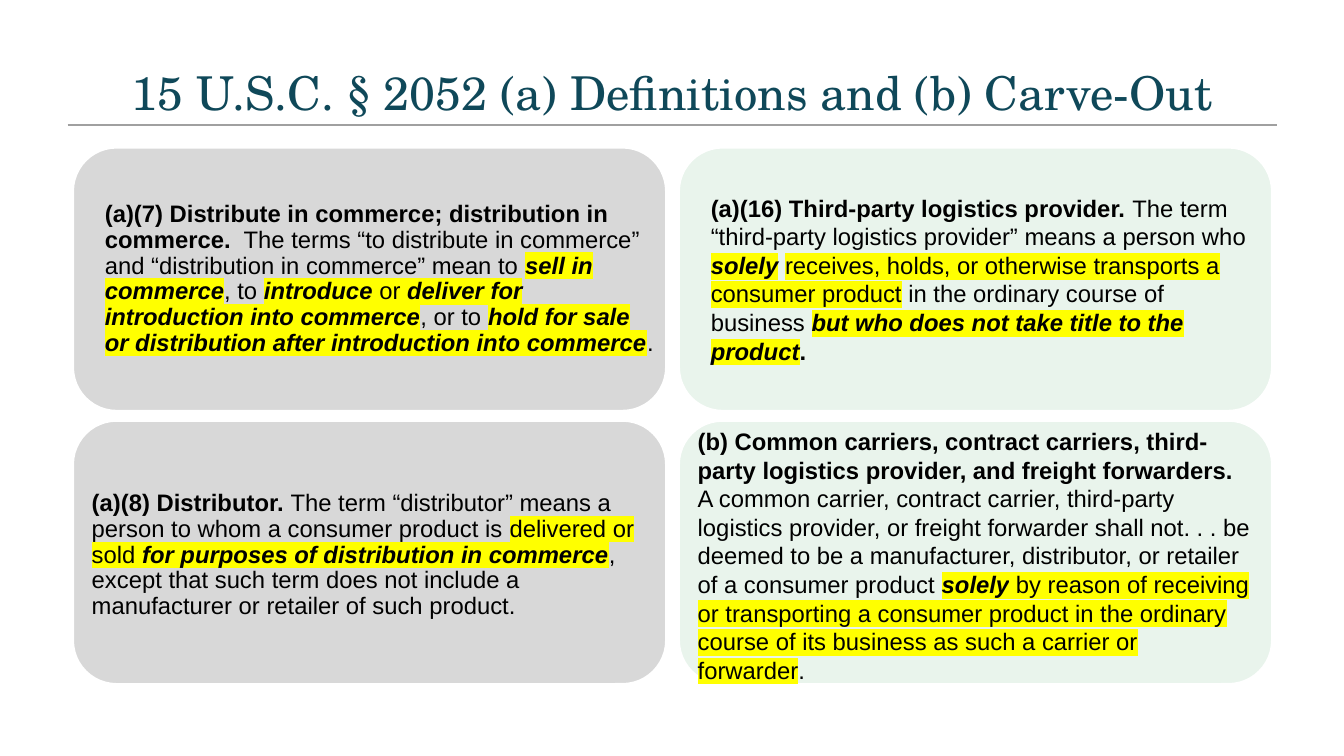
import pptx
import pptx.dml.color
import pptx.enum.shapes
import pptx.enum.text
import pptx.oxml
import pptx.oxml.ns
import pptx.util
from pptx.util import Inches

RGBColor = pptx.dml.color.RGBColor
TEAL = RGBColor(0x0F, 0x48, 0x59)
RULE_GRAY = RGBColor(0xA0, 0xA0, 0xA0)
CARD_GRAY = RGBColor(0xD8, 0xD8, 0xD8)
CARD_GREEN = RGBColor(0xE9, 0xF4, 0xEC)
WHITE = RGBColor(0xFF, 0xFF, 0xFF)
BLACK = RGBColor(0x00, 0x00, 0x00)
YELLOW = RGBColor(0xFF, 0xFF, 0x00)

# Card grid, in inches
CARD_LEFT, CARD_TOP = 0.72, 1.46
CARD_WIDTH, CARD_HEIGHT = 5.89, 2.62
COLUMN_PITCH, ROW_PITCH = 6.01, 2.71
TEXT_WIDTH, TEXT_HEIGHT = 5.63, 2.36
TEXT_OFFSETS = [(0.25, 0.13), (0.12, 0.16)]  # by row
COLUMN_FILLS = [CARD_GRAY, CARD_GREEN]
COLUMN_SPACING = [0.9, 1.0]

# Run styles: b bold, i italic, h highlighted
DISTRIBUTE = [
    ("(a)(7) Distribute in commerce; distribution in commerce.", "b"),
    ("  The terms “to distribute in commerce” and “distribution in commerce” mean to ", ""),
    ("sell in commerce", "bih"),
    (", to ", ""),
    ("introduce", "bih"),
    (" or ", "h"),
    ("deliver for introduction into commerce", "bih"),
    (", or to ", ""),
    ("hold for sale or distribution after introduction into commerce", "bih"),
    (".", ""),
]
DISTRIBUTOR = [
    ("(a)(8) Distributor. ", "b"),
    ("The term “distributor” means a person to whom a consumer product is ", ""),
    ("delivered or sold ", "h"),
    ("for purposes of distribution in commerce", "bih"),
    (", except that such term does not include a manufacturer or retailer of such product.", ""),
]
LOGISTICS_PROVIDER = [
    ("(a)(16) Third-party logistics provider. ", "b"),
    ("The term “third-party logistics provider” means a person who ", ""),
    ("solely", "bih"),
    (" ", ""),
    ("receives, holds, or otherwise transports a consumer product", "h"),
    (" in the ordinary course of business ", ""),
    ("but who does not take title to the product", "bih"),
    (".", "b"),
]
CARRIERS = [
    ("(b) Common carriers, contract carriers, third-party logistics provider, "
     "and freight forwarders.", "b"),
    (" A common carrier, contract carrier, third-party logistics provider, or freight "
     "forwarder shall not. . . be deemed to be a manufacturer, distributor, or retailer "
     "of a consumer product ", ""),
    ("solely", "bih"),
    (" by reason of receiving or transporting a consumer product in the ordinary course "
     "of its business as such a carrier or forwarder", "h"),
    (".", ""),
]
CARD_ROWS = [[DISTRIBUTE, LOGISTICS_PROVIDER], [DISTRIBUTOR, CARRIERS]]


def set_font(font, name, size, color):
    font.name = name
    font.size = pptx.util.Pt(size)
    font.color.rgb = color


def add_title(slide, text):
    title = slide.shapes.title
    title.left, title.top = Inches(0.67), Inches(0.58)
    title.width, title.height = Inches(12), Inches(0.67)
    frame = title.text_frame
    frame.text = text
    frame.vertical_anchor = pptx.enum.text.MSO_ANCHOR.MIDDLE
    paragraph = frame.paragraphs[0]
    paragraph.alignment = pptx.enum.text.PP_ALIGN.CENTER
    set_font(paragraph.font, "TeX Gyre Schola", 33.3, TEAL)


def add_rule(slide):
    rule = slide.shapes.add_connector(
        pptx.enum.shapes.MSO_CONNECTOR.STRAIGHT,
        Inches(0.67), Inches(1.24), Inches(12.67), Inches(1.24))
    rule.line.color.rgb = RULE_GRAY
    rule.line.width = pptx.util.Pt(1)
    properties = rule._element.spPr
    properties.append(pptx.oxml.parse_xml(
        f"<a:effectLst {pptx.oxml.ns.nsdecls('a')}/>"))


def highlight(run):
    run._r.get_or_add_rPr().append(pptx.oxml.parse_xml(
        f"<a:highlight {pptx.oxml.ns.nsdecls('a')}>"
        f'<a:srgbClr val="{YELLOW}"/></a:highlight>'))


def add_card(slide, left, top, fill):
    card = slide.shapes.add_shape(
        pptx.enum.shapes.MSO_SHAPE.ROUNDED_RECTANGLE,
        Inches(left), Inches(top), Inches(CARD_WIDTH), Inches(CARD_HEIGHT))
    card.shadow.inherit = False
    card.fill.solid()
    card.fill.fore_color.rgb = fill
    card.line.color.rgb = WHITE
    card.line.width = pptx.util.Pt(2)


def add_definition(slide, left, top, runs, line_spacing):
    box = slide.shapes.add_textbox(
        Inches(left), Inches(top), Inches(TEXT_WIDTH), Inches(TEXT_HEIGHT))
    frame = box.text_frame
    frame.word_wrap = True
    frame.vertical_anchor = pptx.enum.text.MSO_ANCHOR.MIDDLE
    frame.margin_left = frame.margin_right = Inches(0.07)
    frame.margin_top = frame.margin_bottom = Inches(0.07)
    paragraph = frame.paragraphs[0]
    paragraph.line_spacing = line_spacing
    set_font(paragraph.font, "Arial", 17, BLACK)
    for text, style in runs:
        run = paragraph.add_run()
        run.text = text
        run.font.bold = "b" in style
        run.font.italic = "i" in style
        if "h" in style:
            highlight(run)


def main():
    presentation = pptx.Presentation()
    presentation.slide_width = Inches(13.33)
    presentation.slide_height = Inches(7.5)
    slide = presentation.slides.add_slide(presentation.slide_layouts[5])

    # Heading
    add_rule(slide)
    add_title(slide, "15 U.S.C. § 2052 (a) Definitions and (b) Carve-Out")

    # Definition cards
    for row, definitions in enumerate(CARD_ROWS):
        offset_x, offset_y = TEXT_OFFSETS[row]
        for column, runs in enumerate(definitions):
            left = CARD_LEFT + column * COLUMN_PITCH
            top = CARD_TOP + row * ROW_PITCH
            add_card(slide, left, top, COLUMN_FILLS[column])
            add_definition(slide, left + offset_x, top + offset_y,
                           runs, COLUMN_SPACING[column])

    presentation.save("out.pptx")


if __name__ == "__main__":
    main()
